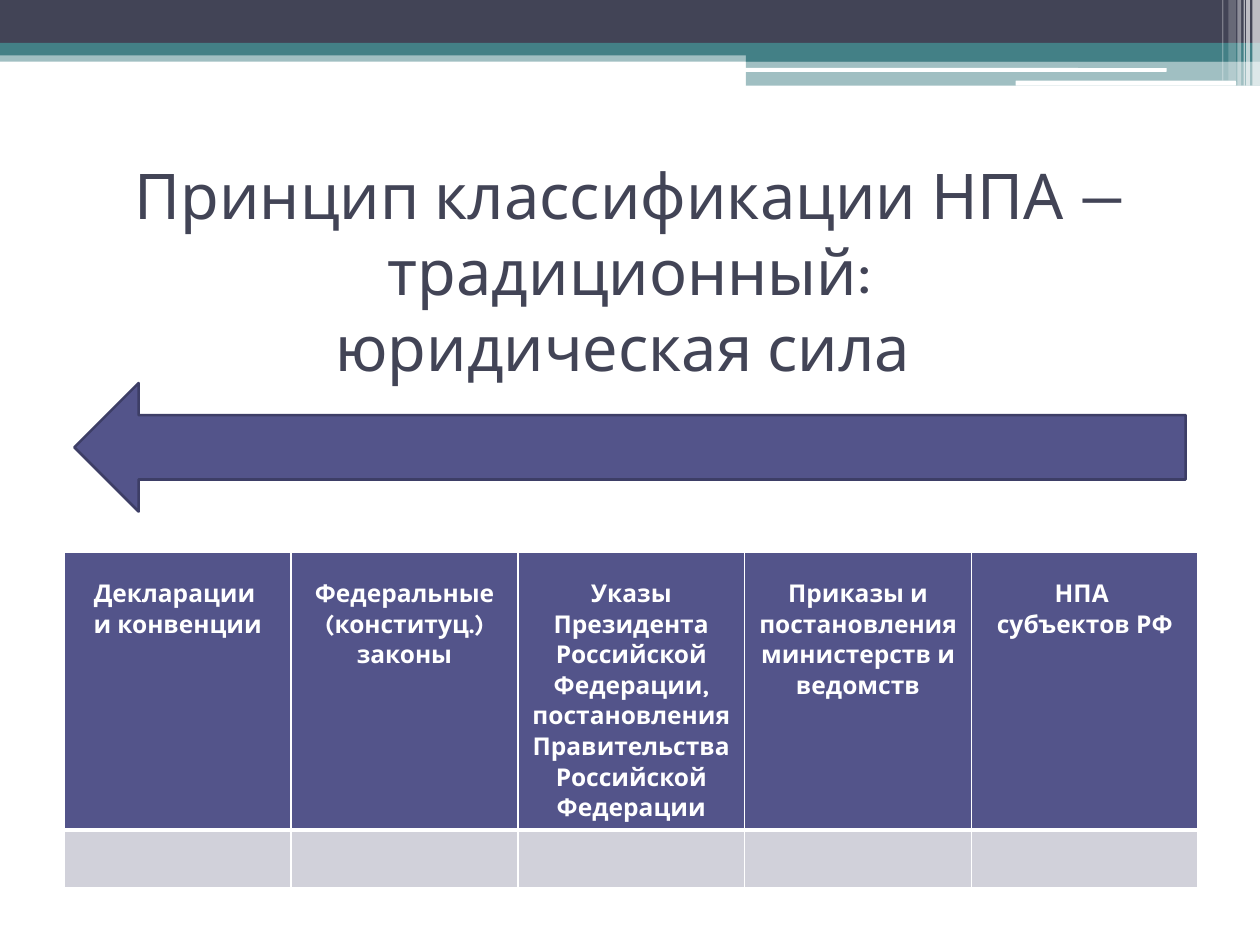
from lxml import etree
from pptx import Presentation
from pptx.dml.color import RGBColor
from pptx.enum.shapes import MSO_SHAPE
from pptx.enum.text import MSO_ANCHOR, PP_ALIGN
from pptx.oxml.ns import qn
from pptx.util import Inches, Pt

RECTANGLE = MSO_SHAPE.RECTANGLE
ROUNDED = MSO_SHAPE.ROUNDED_RECTANGLE
RIGHT_ARROW = MSO_SHAPE.RIGHT_ARROW
CENTER = PP_ALIGN.CENTER
MIDDLE = MSO_ANCHOR.MIDDLE

FONT = "Karla"
COLORS = {
    "dark": "424456",
    "teal": "438086",
    "white": "FFFFFF",
    "violet": "53548A",
    "outline": "3D3E66",
    "pale": "D1D1DA",
}
TITLE = "Принцип классификации НПА —традиционный:\vюридическая сила "
ACTS = [
    "Декларации \vи конвенции",
    "Федеральные (конституц.) законы",
    "Указы Президента Российской Федерации, постановления "
    "Правительства Российской Федерации",
    "Приказы и постановления министерств и ведомств",
    "НПА \vсубъектов РФ",
]


def color(name):
    return RGBColor.from_string(COLORS[name])


def add_filled_shape(slide, kind, box, fill, opacity=100):
    shape = slide.shapes.add_shape(kind, *map(Inches, box))
    shape.shadow.inherit = False
    shape.fill.solid()
    shape.fill.fore_color.rgb = color(fill)
    shape.line.fill.background()
    if opacity < 100:
        rgb = shape.fill._xPr.find(".//" + qn("a:srgbClr"))
        etree.SubElement(rgb, qn("a:alpha"), val=str(opacity * 1000))
    return shape


def add_header_band(slide, left, top, width):
    """Bars across the top, a stepped block and fine stripes at the right."""
    step = 5.92
    bars = [
        (RECTANGLE, 0, 0.4, width, 0.09, "teal", 50),
        (RECTANGLE, 0, 0, width, 0.34, "dark", 100),
        (RECTANGLE, 0, 0.34, width, 0.1, "teal", 100),
        (RECTANGLE, step, 0.39, width - step, 0.1, "teal", 100),
        (RECTANGLE, step, 0.48, width - step, 0.2, "teal", 50),
        (ROUNDED, 5.91, 0.54, 3.35, 0.03, "white", 100),
        (ROUNDED, 8.06, 0.64, 1.75, 0.04, "white", 100),
    ]
    for kind, x, y, bar_width, height, fill, opacity in bars:
        box = (left + x, top + y, bar_width, height)
        add_filled_shape(slide, kind, box, fill, opacity)

    stripes = [
        (0.06, 0.06, 0.68, 65),
        (0.11, 0.03, 0.68, 65),
        (0.13, 0.01, 0.68, 60),
        (0.18, 0.03, 0.68, 40),
        (0.25, 0.06, 0.64, 20),
        (0.3, 0.01, 0.64, 30),
    ]
    for from_right, stripe_width, height, opacity in stripes:
        box = (left + width - from_right, top, stripe_width, height)
        add_filled_shape(slide, RECTANGLE, box, "white", opacity)


def add_title(slide, box):
    frame = slide.shapes.add_textbox(*map(Inches, box)).text_frame
    frame.word_wrap = True
    frame.vertical_anchor = MIDDLE
    frame.text = TITLE
    paragraph = frame.paragraphs[0]
    paragraph.alignment = CENTER
    paragraph.font.name = FONT
    paragraph.font.size = Pt(36)
    paragraph.font.color.rgb = color("dark")


def add_force_arrow(slide, box):
    arrow = add_filled_shape(slide, RIGHT_ARROW, box, "violet")
    arrow.rotation = 180
    arrow.line.color.rgb = color("outline")
    arrow.line.width = Pt(1.5)


def style_cell(cell, fill, top=1, bottom=1):
    """Fill a cell and give it white borders, with widths in points."""
    cell.fill.solid()
    cell.fill.fore_color.rgb = color(fill)
    properties = cell._tc.get_or_add_tcPr()
    sides = {"lnL": 1, "lnR": 1, "lnT": top, "lnB": bottom}
    for index, (side, width) in enumerate(sides.items()):
        line = etree.Element(qn("a:" + side), w=str(Pt(width)))
        solid = etree.SubElement(line, qn("a:solidFill"))
        etree.SubElement(solid, qn("a:srgbClr"), val=COLORS["white"])
        properties.insert(index, line)


def add_acts_table(slide, left, top, width):
    heights = [2.16, 0.46]
    box = (left, top, width, sum(heights))
    table = slide.shapes.add_table(
        len(heights), len(ACTS), *map(Inches, box)).table
    for row, height in zip(table.rows, heights):
        row.height = Inches(height)
    for index, text in enumerate(ACTS):
        table.columns[index].width = Inches(width / len(ACTS))
        header = table.cell(0, index)
        header.margin_left = header.margin_right = Inches(0.07)
        header.margin_top = Inches(0.21)
        header.margin_bottom = 0
        header.text = text
        paragraph = header.text_frame.paragraphs[0]
        paragraph.alignment = CENTER
        paragraph.line_spacing = 1.07
        paragraph.font.name = FONT
        paragraph.font.size = Pt(14)
        paragraph.font.bold = True
        paragraph.font.color.rgb = color("white")
        style_cell(header, "violet", bottom=3)
        style_cell(table.cell(1, index), "pale", top=3)


def main():
    presentation = Presentation()
    presentation.slide_width = Inches(10)
    presentation.slide_height = Inches(7.5)
    slide = presentation.slides.add_slide(presentation.slide_layouts[6])
    add_header_band(slide, 0, 0, 10)
    add_title(slide, (0.5, 1.25, 9, 1.79))
    add_acts_table(slide, 0.51, 4.38, 9)
    add_force_arrow(slide, (0.59, 3.04, 8.82, 1.02))
    presentation.save("out.pptx")


if __name__ == "__main__":
    main()
